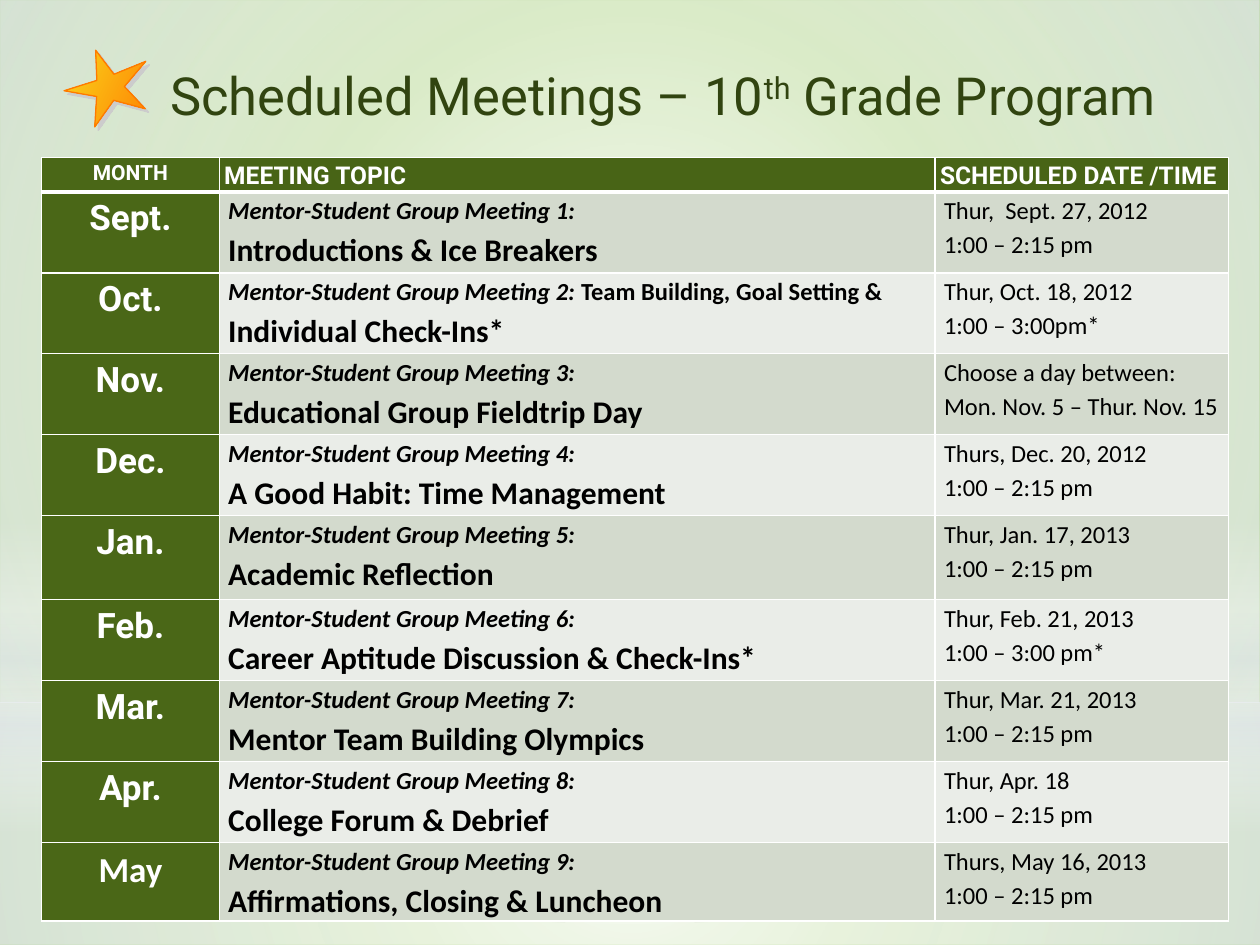
"""Build the slide with the 10th grade meeting schedule."""
from pptx import Presentation
from pptx.dml.color import RGBColor as RGB
from pptx.enum.shapes import MSO_SHAPE as SHAPE
from pptx.enum.text import MSO_AUTO_SIZE as AUTO, PP_ALIGN as ALIGN
from pptx.oxml import parse_xml
from pptx.oxml.ns import nsdecls
from pptx.util import Cm, Pt

COLORS = {
    "base": "9DCA6C", "white": "FFFFFF", "mist": "E4E9EF", "black": "000000",
    "title": "314410", "month": "4A6717", "head": "486416",
    "odd": "D3DACD", "even": "EAEDE8",
    "yellow": "F9E11E", "orange": "FF7900", "shadow": "CCCCCC",
}
MONTH = {"name": "Roboto", "size": Pt(20), "bold": True, "color": "white"}
HEAD = {**MONTH, "size": Pt(14)}
SMALL_HEAD = {**MONTH, "size": Pt(12)}
MAY = {**MONTH, "name": "Calibri"}
DATE = {"name": "Calibri", "size": Pt(14), "bold": False, "color": "black"}
DETAIL = {**DATE, "bold": True}
MEETING = {**DETAIL, "italic": True}
TOPIC = {**DETAIL, "size": Pt(18)}
TITLE = {"name": "Roboto", "size": Pt(30), "color": "title"}


def add_gradient(sp, stops, angle=None):
    gs = "".join(
        f'<a:gs pos="{pos * 1000}"><a:srgbClr val="{COLORS[color]}">'
        f'<a:alpha val="{alpha * 1000}"/></a:srgbClr></a:gs>'
        for pos, color, alpha in stops)
    if angle is None:
        way = ('<a:path path="circle"><a:fillToRect l="50000" t="50000" '
               'r="50000" b="50000"/></a:path>')
    else:
        way = f'<a:lin ang="{angle * 60000}" scaled="0"/>'
    sp._element.spPr.append(parse_xml(
        f'<a:gradFill {nsdecls("a")} rotWithShape="1">'
        f'<a:gsLst>{gs}</a:gsLst>{way}</a:gradFill>'))
    sp.shadow.inherit = False


def add_runs(p, runs):
    for text, style in runs:
        r = p.add_run()
        r.text = text
        for key, value in style.items():
            if key == "color":
                r.font.color.rgb = RGB.from_string(COLORS[value])
            else:
                setattr(r.font, key, value)


prs = Presentation()
prs.slide_width, prs.slide_height = Cm(25.4), Cm(19.05)
s = prs.slides.add_slide(prs.slide_layouts[6])
s.background.fill.solid()
s.background.fill.fore_color.rgb = RGB.from_string(COLORS["base"])

layers = [
    (SHAPE.RECTANGLE, 14.17, 4.88, None,
     [(0, "white", 91), (37, "white", 76), (100, "mist", 79)]),
    (SHAPE.RECTANGLE, 0, 14.17, None,
     [(0, "white", 89), (48, "white", 62), (100, "mist", 79)]),
    (SHAPE.RECTANGLE, 10.46, 6.35, 90,
     [(0, "white", 0), (29, "white", 30), (45, "mist", 40),
      (55, "white", 26), (65, "mist", 60), (100, "white", 0)]),
    (SHAPE.OVAL, 4.45, 14.17, None, [(0, "white", 100), (56, "white", 0)]),
]
for kind, top, height, angle, stops in layers:
    sp = s.shapes.add_shape(kind, 0, Cm(top), prs.slide_width, Cm(height))
    add_gradient(sp, stops, angle)
    sp.line.fill.background()

meetings = [
    ("Sept.", "Introductions & Ice Breakers", "Thur,  Sept. 27, 2012", "1:00 – 2:15 pm"),
    ("Oct.", "Individual Check-Ins*", "Thur, Oct. 18, 2012", "1:00 – 3:00pm*"),
    ("Nov.", "Educational Group Fieldtrip Day", "Choose a day between:",
     "Mon. Nov. 5 – Thur. Nov. 15"),
    ("Dec.", "A Good Habit: Time Management", "Thurs, Dec. 20, 2012", "1:00 – 2:15 pm"),
    ("Jan.", "Academic Reflection", "Thur, Jan. 17, 2013", "1:00 – 2:15 pm"),
    ("Feb.", "Career Aptitude Discussion & Check-Ins*", "Thur, Feb. 21, 2013",
     "1:00 – 3:00 pm*"),
    ("Mar.", "Mentor Team Building Olympics", "Thur, Mar. 21, 2013", "1:00 – 2:15 pm"),
    ("Apr.", "College Forum & Debrief", "Thur, Apr. 18", "1:00 – 2:15 pm"),
    ("May", "Affirmations, Closing & Luncheon", "Thurs, May 16, 2013", "1:00 – 2:15 pm"),
]
rows = [[[[("MONTH", SMALL_HEAD)]], [[("MEETING TOPIC", HEAD)]],
         [[("SCHEDULED DATE /TIME", HEAD)]]]]
for number, (month, topic, date, time) in enumerate(meetings, 1):
    label = f"Mentor-Student Group Meeting {number}:"
    topic_lines = [[(label, MEETING)], [(topic, TOPIC)]]
    if month == "Oct.":
        topic_lines = [[(label + " ", MEETING), ("Team Building", DETAIL), (",", MEETING),
                        (" Goal Setting & ", DETAIL), (topic, TOPIC)]]
    rows.append([[[(month, MAY if month == "May" else MONTH)]], topic_lines,
                 [[(date, DATE)], [(time, DATE)]]])

heights = [0.69] + [1.63] * 4 + [1.7] + [1.63] * 3 + [1.52]
widths = [3.58, 14.43, 5.92]
table = s.shapes.add_table(len(rows), len(widths), Cm(0.84), Cm(3.18),
                           Cm(sum(widths)), Cm(sum(heights))).table
for column, width in zip(table.columns, widths):
    column.width = Cm(width)
for i, (row, height) in enumerate(zip(rows, heights)):
    table.rows[i].height = Cm(height)
    for j, lines in enumerate(row):
        cell = table.cell(i, j)
        cell.margin_left = cell.margin_right = Cm(0.1 if i == 0 or j == 0 else 0.18)
        cell.margin_top = cell.margin_bottom = 0
        color = "month" if j == 0 else "head" if i == 0 else "odd" if i % 2 else "even"
        cell.fill.solid()
        cell.fill.fore_color.rgb = RGB.from_string(COLORS[color])
        for k, side in enumerate("LRTB"):
            thick = (i == 0 and side == "B") or (i == 1 and side == "T")
            cell._tc.get_or_add_tcPr().insert(k, parse_xml(
                f'<a:ln{side} {nsdecls("a")} w="{Pt(3 if thick else 1)}"><a:solidFill>'
                f'<a:srgbClr val="{COLORS["white"]}"/></a:solidFill></a:ln{side}>'))
        tf = cell.text_frame
        for k, runs in enumerate(lines):
            p = tf.add_paragraph() if k else tf.paragraphs[0]
            p.line_spacing = 1.15
            p.alignment = ALIGN.LEFT if j else ALIGN.CENTER
            add_runs(p, runs)

tf = s.shapes.add_textbox(Cm(3.18), Cm(1.14), Cm(21.39), Cm(1.55)).text_frame
tf.word_wrap = True
tf.auto_size = AUTO.SHAPE_TO_FIT_TEXT
p = tf.paragraphs[0]
add_runs(p, [("Scheduled Meetings – 10", TITLE), ("th", TITLE), (" Grade Program", TITLE)])
p.runs[1]._r.get_or_add_rPr().set("baseline", "30000")

star = s.shapes.add_shape(SHAPE.STAR_5_POINT, Cm(1.3), Cm(0.97), Cm(1.75), Cm(1.45))
star.rotation = 340.2
star.adjustments[0] = 0.17
add_gradient(star, [(0, "yellow", 100), (100, "orange", 100)], 45)
star.line.color.rgb = RGB.from_string(COLORS["orange"])
star.line.width = Pt(0.75)
star._element.spPr[-1].append(parse_xml(
    f'<a:outerShdw {nsdecls("a")} dist="{Pt(2.8)}" dir="2700000" algn="ctr" '
    f'rotWithShape="0"><a:srgbClr val="{COLORS["shadow"]}"/></a:outerShdw>'))

prs.save("out.pptx")
